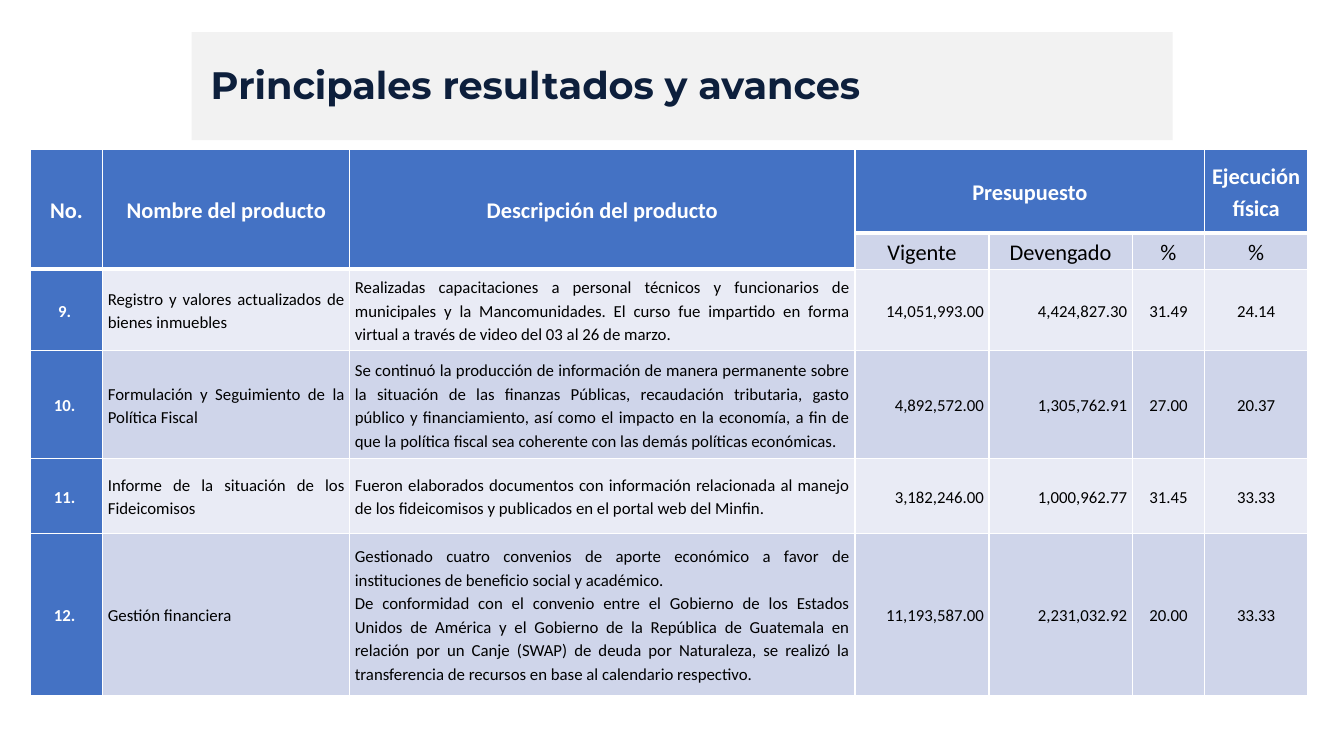
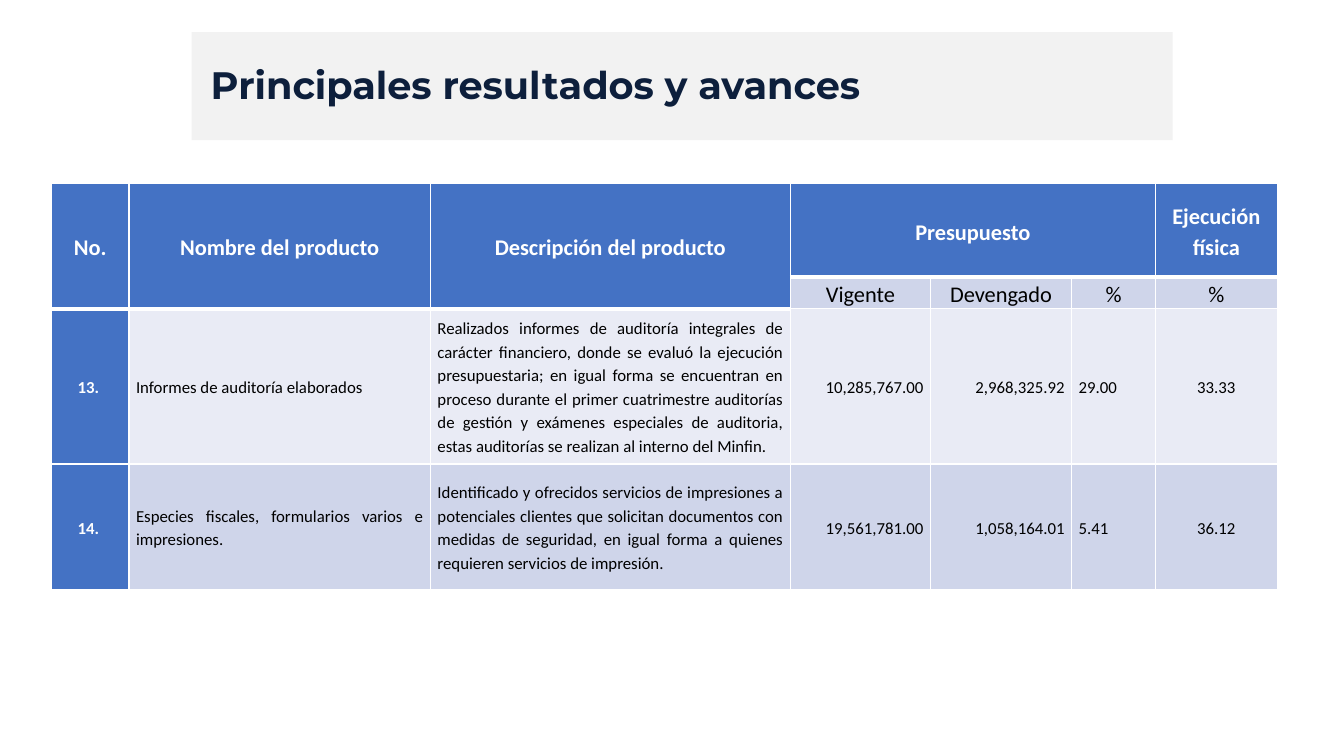
from dataclasses import dataclass

from lxml.etree import SubElement
from pptx import Presentation
from pptx.dml.color import RGBColor
from pptx.enum.shapes import MSO_SHAPE
from pptx.enum.text import MSO_ANCHOR, MSO_AUTO_SIZE, PP_ALIGN
from pptx.oxml.ns import qn
from pptx.util import Inches, Pt


@dataclass(frozen=True)
class Theme:
    navy: str = "0D1F3C"
    band: str = "F2F2F2"
    header: str = "4472C4"
    light_row: str = "E9EBF5"
    dark_row: str = "CFD5EA"
    white: str = "FFFFFF"
    black: str = "000000"
    title_font: str = "Montserrat"
    body_font: str = "Calibri"
    title_size: float = 27.3
    header_size: int = 16
    body_size: int = 12
    thin_line: int = 1
    thick_line: int = 3


THEME = Theme()
TITLE = "Principales resultados y avances"
LEFT, CENTER, RIGHT, JUSTIFY = PP_ALIGN.LEFT, PP_ALIGN.CENTER, PP_ALIGN.RIGHT, PP_ALIGN.JUSTIFY

HEADER_ROWS = [
    ["No.", "Nombre del producto", "Descripción del producto", "Presupuesto", "", "", "Ejecución física"],
    ["", "", "", "Vigente", "Devengado", "%", "%"],
]
HEADER_MERGES = [((0, 0), (1, 0)), ((0, 1), (1, 1)), ((0, 2), (1, 2)), ((0, 3), (0, 5))]
TALL_HEADER_COLUMNS = 3

TABLES = [
    {
        "left": 0.3,
        "top": 1.48,
        "columns": [0.72, 2.45, 5.01, 1.33, 1.42, 0.72, 1.02],
        "rows": [0.83, 0.36, 0.81, 1.07, 0.74, 1.61],
        "margin": 0.05,
        "percent_align": CENTER,
        "products": [
            ["9. ", "Registro y valores actualizados de bienes inmuebles",
             "Realizadas capacitaciones a personal técnicos y funcionarios de municipales y la "
             "Mancomunidades. El curso fue impartido en forma virtual a través de video del 03 al 26 de marzo.",
             "14,051,993.00", "4,424,827.30", "31.49", "24.14"],
            ["10. ", "Formulación y Seguimiento de la Política Fiscal",
             "Se continuó la producción de información de manera permanente sobre la situación de las "
             "finanzas Públicas, recaudación tributaria, gasto público y financiamiento, así como el "
             "impacto en la economía, a fin de que la política fiscal sea coherente con las demás "
             "políticas económicas.",
             "4,892,572.00", "1,305,762.91", "27.00", "20.37"],
            ["11. ", "Informe de la situación de los Fideicomisos",
             "Fueron elaborados documentos con información relacionada al manejo de los fideicomisos "
             "y publicados en el portal web del Minfin.",
             "3,182,246.00", "1,000,962.77", "31.45", "33.33"],
            ["12. ", "Gestión financiera",
             "Gestionado cuatro convenios de aporte económico a favor de instituciones de beneficio "
             "social y académico.\n"
             "De conformidad con el convenio entre el Gobierno de los Estados Unidos de América y el "
             "Gobierno de la República de Guatemala en relación por un Canje (SWAP) de deuda por "
             "Naturaleza, se realizó la transferencia de recursos en base al calendario respectivo.",
             "11,193,587.00", "2,231,032.92", "20.00", "33.33"],
        ],
    },
    {
        "left": 0.51,
        "top": 1.82,
        "columns": [0.77, 2.99, 3.57, 1.39, 1.4, 0.83, 1.21],
        "rows": [0.93, 0.31, 1.54, 1.25],
        "margin": 0.07,
        "percent_align": LEFT,
        "products": [
            ["13. ", "Informes de auditoría elaborados",
             "Realizados informes de auditoría integrales de carácter financiero, donde se evaluó la "
             "ejecución presupuestaria; en igual forma se encuentran en proceso durante el primer "
             "cuatrimestre auditorías de gestión y exámenes especiales de auditoria, estas auditorías "
             "se realizan al interno del Minfin.",
             "10,285,767.00", "2,968,325.92", "29.00", "33.33"],
            ["14. ", "Especies fiscales, formularios varios e impresiones.",
             "Identificado y ofrecidos servicios de impresiones a potenciales clientes que solicitan "
             "documentos con medidas de seguridad, en igual forma a quienes requieren servicios de "
             "impresión.",
             "19,561,781.00", "1,058,164.01", "5.41", "36.12"],
        ],
    },
]


def color(value):
    return RGBColor.from_string(value)


def style_paragraph(paragraph, font_name, size, font_color, bold, align, line_spacing):
    paragraph.alignment = align
    paragraph.line_spacing = line_spacing
    font = paragraph.font
    font.name = font_name
    font.size = Pt(size)
    font.bold = bold
    font.color.rgb = color(font_color)


def add_layout_band(slide):
    """Draw the title band and hand it to the slide's layout, so every slide shows it."""
    band = slide.shapes.add_shape(
        MSO_SHAPE.RECTANGLE, Inches(1.9), Inches(0.32), Inches(9.73), Inches(1.07))
    band.shadow.inherit = False
    band.fill.solid()
    band.fill.fore_color.rgb = color(THEME.band)
    band.line.fill.background()
    slide.slide_layout.shapes._spTree.append(band._element)


def format_title(slide):
    title = slide.shapes.title
    title.left, title.top = Inches(1.99), Inches(0.5)
    title.width, title.height = Inches(8.69), Inches(0.73)
    title.text = TITLE
    frame = title.text_frame
    frame.vertical_anchor = MSO_ANCHOR.MIDDLE
    frame.auto_size = MSO_AUTO_SIZE.NONE
    style_paragraph(frame.paragraphs[0], THEME.title_font, THEME.title_size,
                    THEME.navy, True, LEFT, 0.9)


def is_header(row, column):
    return row == 0 or (row == 1 and column < TALL_HEADER_COLUMNS)


def set_borders(cell, row, column):
    thick_edges = {
        "lnT": row > 0 and is_header(row - 1, column),
        "lnB": is_header(row, column),
    }
    properties = cell._tc.get_or_add_tcPr()
    for edge in ("lnL", "lnR", "lnT", "lnB"):
        width = THEME.thick_line if thick_edges.get(edge) else THEME.thin_line
        line = SubElement(properties, qn(f"a:{edge}"), w=str(Pt(width)))
        fill = SubElement(line, qn("a:solidFill"))
        SubElement(fill, qn("a:srgbClr"), val=THEME.white)


def format_cell(cell, row, column, align, margin):
    strong = is_header(row, column) or column == 0
    row_fill = THEME.light_row if row > 0 and row % 2 == 0 else THEME.dark_row
    set_borders(cell, row, column)
    cell.fill.solid()
    cell.fill.fore_color.rgb = color(THEME.header if strong else row_fill)
    cell.vertical_anchor = MSO_ANCHOR.MIDDLE
    cell.margin_left = cell.margin_right = Inches(margin)
    cell.margin_top = cell.margin_bottom = 0
    size = THEME.header_size if row < len(HEADER_ROWS) else THEME.body_size
    for paragraph in cell.text_frame.paragraphs:
        style_paragraph(paragraph, THEME.body_font, size,
                        THEME.white if strong else THEME.black, strong, align, 1.15)


def add_product_table(slide, spec_data):
    widths, heights = spec_data["columns"], spec_data["rows"]
    table = slide.shapes.add_table(
        len(heights), len(widths), Inches(spec_data["left"]), Inches(spec_data["top"]),
        Inches(sum(widths)), Inches(sum(heights))).table
    for column, width in zip(table.columns, widths):
        column.width = Inches(width)
    for row, height in zip(table.rows, heights):
        row.height = Inches(height)

    body_aligns = [CENTER, JUSTIFY, JUSTIFY, RIGHT, RIGHT, spec_data["percent_align"], CENTER]
    for row, values in enumerate(HEADER_ROWS + spec_data["products"]):
        for column, value in enumerate(values):
            cell = table.cell(row, column)
            cell.text = value
            align = CENTER if row < len(HEADER_ROWS) else body_aligns[column]
            format_cell(cell, row, column, align, spec_data["margin"])
    for first, last in HEADER_MERGES:
        table.cell(*first).merge(table.cell(*last))


def main():
    presentation = Presentation()
    presentation.slide_width = Inches(13.33)
    presentation.slide_height = Inches(7.5)
    title_only = presentation.slide_layouts[5]
    for index, table_data in enumerate(TABLES):
        slide = presentation.slides.add_slide(title_only)
        if index == 0:
            add_layout_band(slide)
        format_title(slide)
        add_product_table(slide, table_data)
    presentation.save("out.pptx")


if __name__ == "__main__":
    main()
